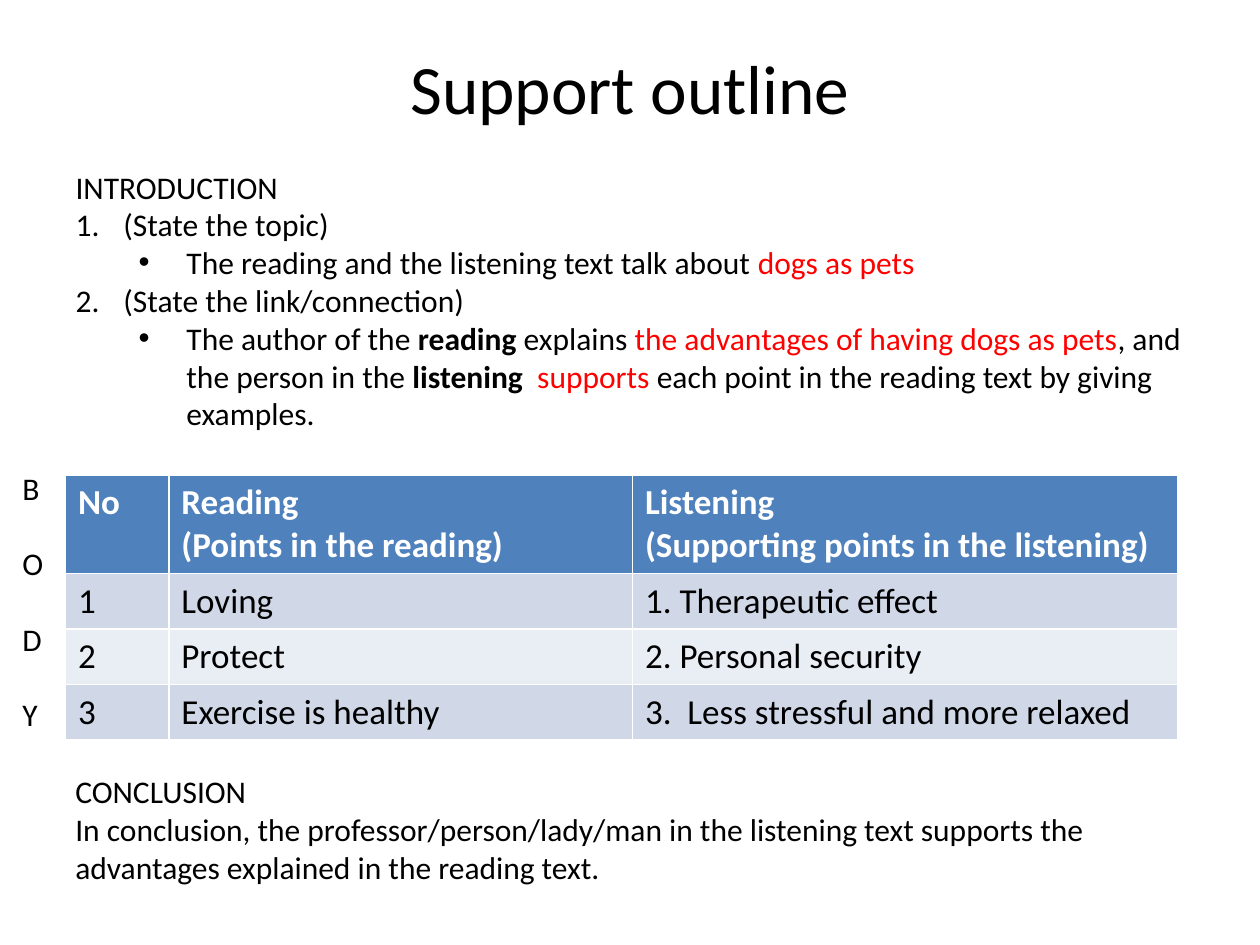
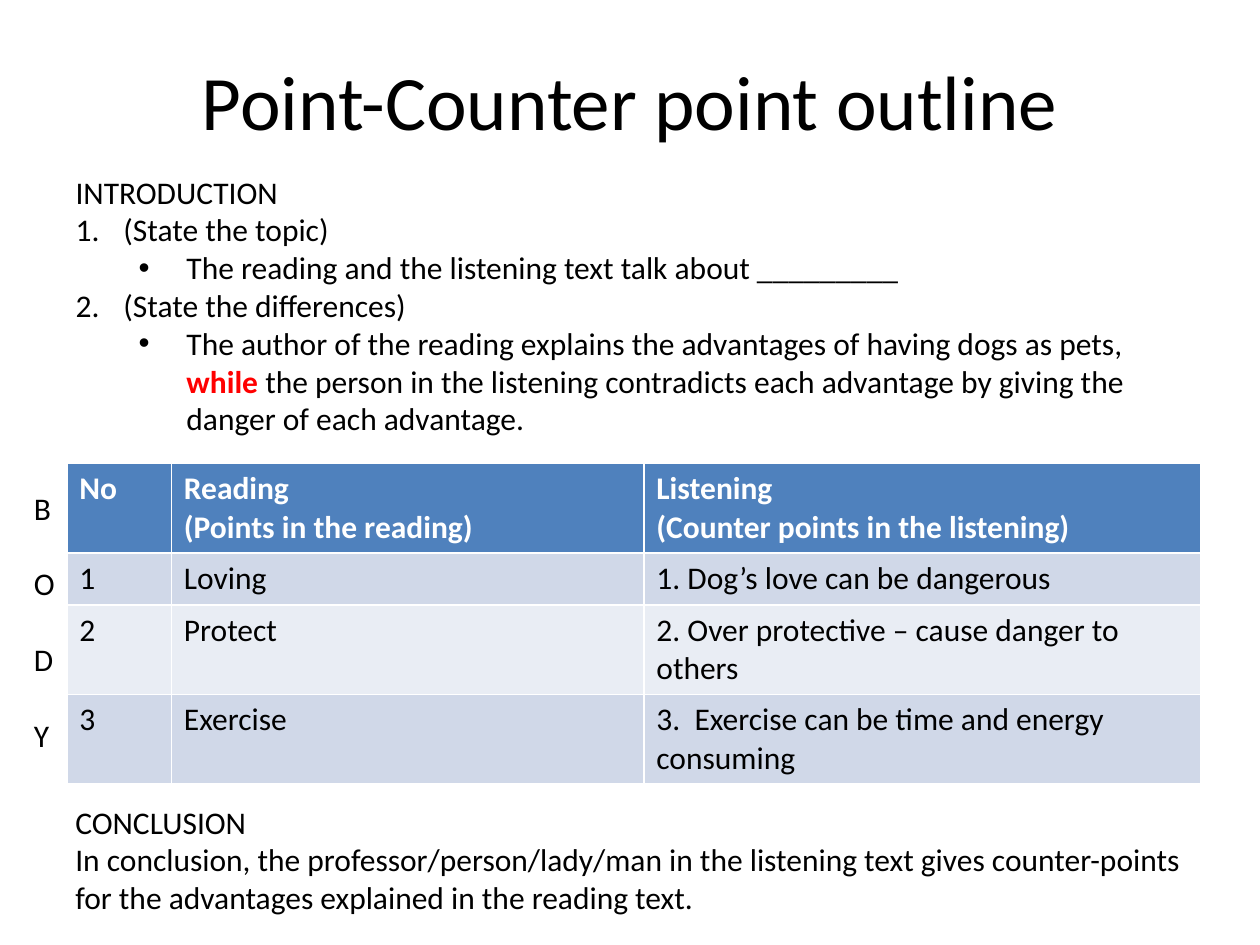
from lxml import etree
from pptx import Presentation
from pptx.dml.color import RGBColor
from pptx.enum.text import MSO_ANCHOR, MSO_AUTO_SIZE, PP_ALIGN
from pptx.oxml.ns import qn
from pptx.util import Inches, Pt

MIDDLE, TOP = MSO_ANCHOR.MIDDLE, MSO_ANCHOR.TOP
CENTER, LEFT = PP_ALIGN.CENTER, PP_ALIGN.LEFT
NO_FIT = MSO_AUTO_SIZE.NONE

BLACK = RGBColor(0x00, 0x00, 0x00)
WHITE = RGBColor(0xFF, 0xFF, 0xFF)
RED = RGBColor(0xFF, 0x00, 0x00)
HEADER_BLUE = RGBColor(0x4F, 0x81, 0xBD)
BANDS = (RGBColor(0xD0, 0xD8, 0xE8), RGBColor(0xE9, 0xED, 0xF4))

FONT = "Calibri"
TEXT_SIZE = 18
LINE_PITCH = Pt(21.6)
TITLE_AND_CONTENT = 1

# Paragraph kinds of the introduction: level, left indent, hanging indent
HEADING, NUMBERED, BULLET = "heading", "numbered", "bullet"
INDENTS = {HEADING: (0, 0, 0), NUMBERED: (0, 0.38, -0.38), BULLET: (1, 0.88, -0.38)}


def add_run(paragraph, text, size=TEXT_SIZE, color=BLACK, bold=False):
    run = paragraph.add_run()
    run.text = text
    run.font.name = FONT
    run.font.size = Pt(size)
    run.font.bold = bold
    run.font.color.rgb = color


def next_paragraph(frame, index):
    return frame.add_paragraph() if index else frame.paragraphs[0]


def place(shape, box):
    shape.left, shape.top, shape.width, shape.height = map(Inches, box)


def mark_paragraph(paragraph, kind):
    """Set the indents and the number or bullet of an introduction paragraph."""
    level, margin, hanging = INDENTS[kind]
    paragraph.level = level
    paragraph.alignment = LEFT
    paragraph.space_before = Pt(0)
    properties = paragraph._p.get_or_add_pPr()
    properties.set("marL", str(Inches(margin)))
    properties.set("indent", str(Inches(hanging)))
    if kind == HEADING:
        etree.SubElement(properties, qn("a:buNone"))
    elif kind == NUMBERED:
        etree.SubElement(properties, qn("a:buFont"), typeface="+mj-lt")
        etree.SubElement(properties, qn("a:buAutoNum"), type="arabicPeriod")
    else:
        etree.SubElement(properties, qn("a:buFont"), typeface="Arial")
        etree.SubElement(properties, qn("a:buChar"), char="•")


def add_title(slide, box, text, size):
    title = slide.shapes.title
    place(title, box)
    frame = title.text_frame
    frame.auto_size = NO_FIT
    frame.vertical_anchor = MIDDLE
    frame.paragraphs[0].alignment = CENTER
    add_run(frame.paragraphs[0], text, size)


def add_introduction(slide, box, paragraphs):
    introduction = slide.placeholders[1]
    place(introduction, box)
    frame = introduction.text_frame
    frame.auto_size = NO_FIT
    frame.vertical_anchor = TOP
    for index, (kind, *runs) in enumerate(paragraphs):
        paragraph = next_paragraph(frame, index)
        mark_paragraph(paragraph, kind)
        for text, style in runs:
            add_run(paragraph, text, **style)


def add_lines(slide, box, lines, gap=0):
    """Add a text box with one paragraph per line, gap apart."""
    frame = slide.shapes.add_textbox(*map(Inches, box)).text_frame
    frame.word_wrap = True
    for index, line in enumerate(lines):
        paragraph = next_paragraph(frame, index)
        paragraph.space_before = gap if index else Pt(0)
        add_run(paragraph, line)


def add_points_table(slide, box, columns, heights, rows, size):
    table = slide.shapes.add_table(len(rows), len(columns), *map(Inches, box)).table
    for column, width in zip(table.columns, columns):
        column.width = Inches(width)
    for r, (height, texts) in enumerate(zip(heights, rows)):
        table.rows[r].height = Inches(height)
        is_header = r == 0
        for c, text in enumerate(texts):
            cell = table.cell(r, c)
            cell.fill.solid()
            cell.fill.fore_color.rgb = HEADER_BLUE if is_header else BANDS[(r - 1) % 2]
            for index, line in enumerate(text.split("\n")):
                add_run(next_paragraph(cell.text_frame, index), line, size,
                        WHITE if is_header else BLACK, is_header)


def add_outline_slide(prs, title, introduction, body, table, conclusion):
    """Add a slide; each part is a tuple of its box followed by its content."""
    slide = prs.slides.add_slide(prs.slide_layouts[TITLE_AND_CONTENT])
    add_title(slide, *title)
    add_points_table(slide, *table)
    add_introduction(slide, *introduction)
    conclusion_box, summary = conclusion
    add_lines(slide, conclusion_box, ["CONCLUSION", summary])
    add_lines(slide, body, "BODY", LINE_PITCH)


def introduction_text(topic, link, explanation):
    return [
        (HEADING, ("INTRODUCTION", {})),
        (NUMBERED, ("(State the topic)", {})),
        (BULLET, ("The reading and the listening text talk about ", {}), topic),
        (NUMBERED, (link, {})),
        (BULLET, *explanation),
    ]


def table_rows(listening_header, points):
    header = ("No", "Reading\n(Points in the reading)", f"Listening\n({listening_header})")
    return [header] + [(str(n), *point) for n, point in enumerate(points, 1)]


def main():
    prs = Presentation()
    prs.slide_width, prs.slide_height = Inches(10), Inches(7.5)
    red, bold = {"color": RED}, {"bold": True}

    add_outline_slide(
        prs,
        title=((0.5, 0.3, 9, 0.78), "Support outline", 39.6),
        introduction=((0.5, 1.28, 9, 2.22), introduction_text(
            ("dogs as pets", red),
            "(State the link/connection)",
            [("The author of the ", {}), ("reading", bold), (" explains ", {}),
             ("the advantages of having dogs as pets", red),
             (", and the person in the ", {}), ("listening  ", bold), ("supports", red),
             (" each point in the reading text by giving examples.", {})])),
        body=(0.08, 3.67, 0.33, 2.52),
        table=((0.52, 3.77, 8.83, 2.07), (0.82, 3.68, 4.33), (0.77, 0.44, 0.44, 0.44),
               table_rows("Supporting points in the listening", [
                   ("Loving", "1. Therapeutic effect"),
                   ("Protect", "2. Personal security"),
                   ("Exercise is healthy", "3.  Less stressful and more relaxed")]), 20),
        conclusion=((0.5, 6.08, 9, 1.01),
                    "In conclusion, the professor/person/lady/man in the listening text "
                    "supports the advantages explained in the reading text."))

    add_outline_slide(
        prs,
        title=((0.5, 0.17, 9, 1.25), "Point-Counter point outline", 44),
        introduction=((0.5, 1.32, 9, 2.22), introduction_text(
            ("_________", {}),
            "(State the differences)",
            [("The author of the reading explains the advantages of having dogs as pets, ", {}),
             ("while ", red | bold),
             ("the person in the listening contradicts each advantage by giving the "
              "danger of each advantage.", {})])),
        body=(0.17, 3.83, 0.33, 2.52),
        table=((0.53, 3.68, 9, 2.51), (0.83, 3.75, 4.42), (0.7, 0.41, 0.71, 0.71),
               table_rows("Counter points in the listening", [
                   ("Loving", "1. Dog’s love can be dangerous"),
                   ("Protect", "2. Over protective – cause danger to others"),
                   ("Exercise", "3.  Exercise can be time and energy consuming")]), 18),
        conclusion=((0.5, 6.32, 9, 1.01),
                    "In conclusion, the professor/person/lady/man in the listening text gives "
                    "counter-points for the advantages explained in the reading text."))

    prs.save("out.pptx")


if __name__ == "__main__":
    main()
